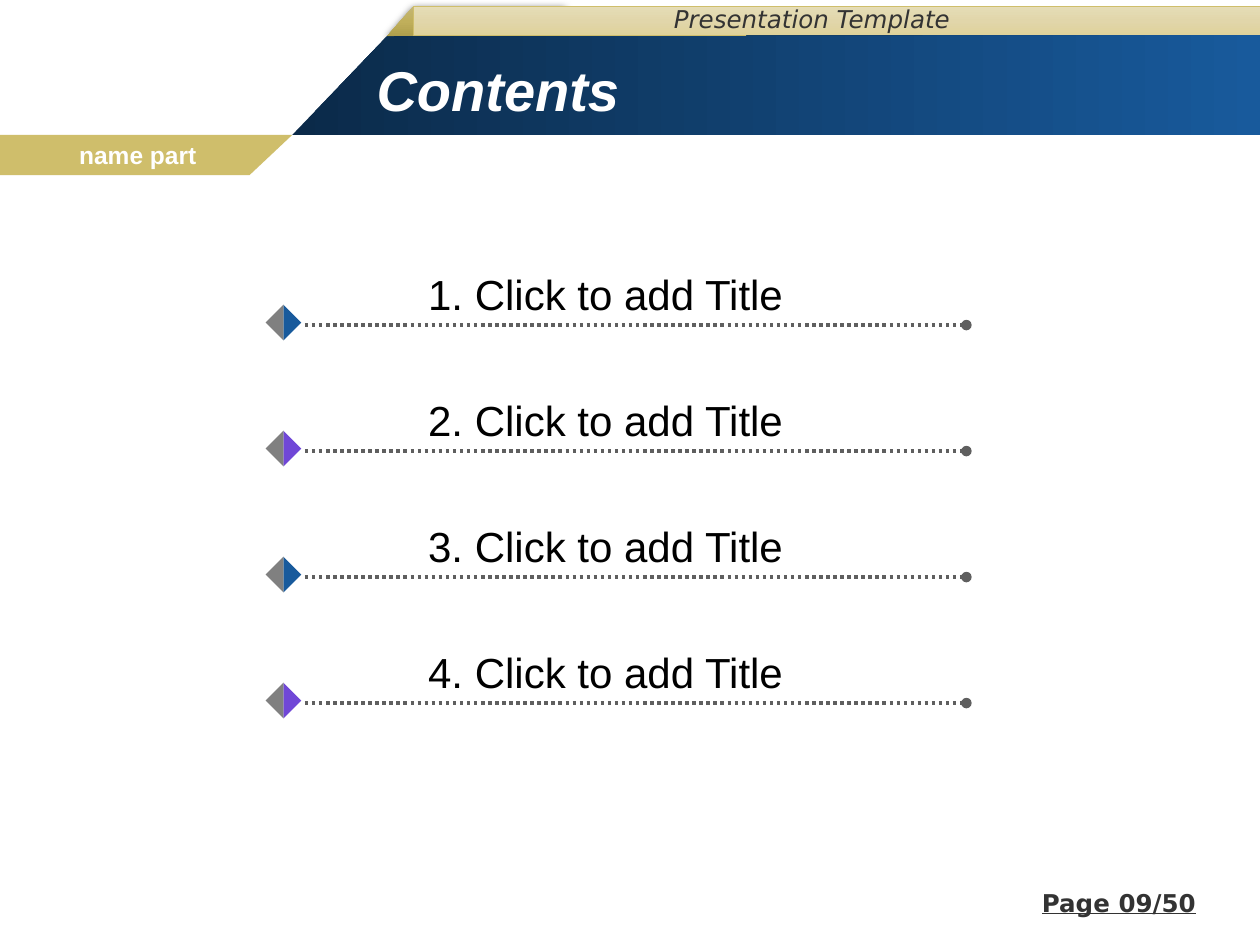
"""Build a contents slide with a slanted header and four dotted title rows."""
import copy

import lxml.etree
import pptx
import pptx.dml.color
import pptx.enum.dml
import pptx.enum.shapes
import pptx.enum.text
import pptx.oxml.ns
import pptx.util

Inches = pptx.util.Inches
Pt = pptx.util.Pt
RGB = pptx.dml.color.RGBColor.from_string
qn = pptx.oxml.ns.qn
SHAPE = pptx.enum.shapes.MSO_SHAPE
ALIGN = pptx.enum.text.PP_ALIGN
ANCHOR = pptx.enum.text.MSO_ANCHOR

COLORS = {
    "gold": "CFBE6B", "white": "FFFFFF", "ink": "333333", "black": "000000",
    "dots": "5F5F5F", "gray": "808080", "blue": "185A9C", "purple": "7047D7",
    "navy": "0B2A49",
    "fold_top": "C3B575", "fold_middle": "C0AF5B", "fold_bottom": "AF9F4C",
    "strip_top": "E6DDB7", "strip_middle": "E1D6AA", "strip_bottom": "DFD29B",
}


def paint(shape, color_names, angle=0):
    shape.shadow.inherit = False
    shape.line.fill.background()
    if len(color_names) == 1:
        shape.fill.solid()
        shape.fill.fore_color.rgb = RGB(COLORS[color_names[0]])
        return
    shape.fill.gradient()
    shape.fill.gradient_angle = angle
    stop_list = shape.element.spPr.find(".//" + qn("a:gsLst"))
    for _ in color_names[2:]:
        stop_list.append(copy.deepcopy(stop_list[0]))
    for index, (stop, name) in enumerate(zip(shape.fill.gradient_stops, color_names)):
        stop.color.rgb = RGB(COLORS[name])
        stop.position = index / (len(color_names) - 1)


def add_text(text, box, color, style, align=ALIGN.LEFT, wrap=True, anchor=ANCHOR.TOP):
    frame = slide.shapes.add_textbox(*map(Inches, box)).text_frame
    frame.word_wrap = wrap
    frame.vertical_anchor = anchor
    paragraph = frame.paragraphs[0]
    paragraph.text = text
    paragraph.alignment = align
    for attribute, value in style.items():
        setattr(paragraph.font, attribute, value)
    paragraph.font.color.rgb = RGB(COLORS[color])


presentation = pptx.Presentation()
presentation.slide_width = Inches(10)
presentation.slide_height = Inches(7.5)
slide = presentation.slides.add_slide(presentation.slide_layouts[6])

part_tag = [(0, 1.07), (2.32, 1.07), (1.98, 1.39), (0, 1.39)]
fold = [(4.48, 0.29), (3.07, 0.29), (3.28, 0.05), (4.48, 0.05)]
title_band = [(2.32, 1.07), (10, 1.07), (10, 0.28), (3.07, 0.29)]

header = []
for points, color_names, angle in [
    (part_tag, ["gold"], 0),
    (fold, ["fold_top", "fold_middle", "fold_bottom"], 270),
    (title_band, ["navy", "blue"], 0),
]:
    corners = [(Inches(x), Inches(y)) for x, y in points]
    outline = slide.shapes.build_freeform(*corners[0])
    outline.add_line_segments(corners[1:], close=True)
    panel = outline.convert_to_shape()
    paint(panel, color_names, angle)
    header.append(panel)
    if points is fold:
        strip = slide.shapes.add_shape(
            SHAPE.RECTANGLE, Inches(3.28), Inches(0.05), Inches(6.72), Inches(0.23))
        paint(strip, ["strip_top", "strip_middle", "strip_bottom"], 270)
        strip.line.color.rgb = RGB(COLORS["gold"])
        strip.line.width = Pt(0.5)

fold_effects = header[1].element.spPr.find(qn("a:effectLst"))
fold_shadow = lxml.etree.SubElement(
    fold_effects, qn("a:outerShdw"), blurRad=str(Pt(4.5)), dist=str(Pt(1.5)), dir="5400000")
shadow_color = lxml.etree.SubElement(fold_shadow, qn("a:srgbClr"), val=COLORS["black"])
lxml.etree.SubElement(shadow_color, qn("a:alpha"), val="63000")

add_text("name part", (0.53, 1.06, 1.13, 0.34), "white",
         {"name": "Arial", "size": Pt(14), "bold": True}, wrap=False)
add_text("Contents", (2.89, 0.4, 7.11, 0.62), "white",
         {"name": "Arial", "size": Pt(32), "bold": True, "italic": True},
         anchor=ANCHOR.MIDDLE)
add_text("Page 09/50", (6.42, 7, 3.17, 0.35), "ink",
         {"name": "DejaVu Sans", "size": Pt(14), "bold": True, "underline": True},
         align=ALIGN.RIGHT)

for row, accent in enumerate(["blue", "purple", "blue", "purple"]):
    rule_y = Inches(2.58 + row)
    rule = slide.shapes.add_connector(
        pptx.enum.shapes.MSO_CONNECTOR.STRAIGHT, Inches(2.42), rule_y, Inches(7.67), rule_y)
    rule.line.color.rgb = RGB(COLORS["dots"])
    rule.line.width = Pt(2)
    rule.line.dash_style = pptx.enum.dml.MSO_LINE.ROUND_DOT
    rule_properties = rule.element.spPr
    lxml.etree.SubElement(rule_properties.find(qn("a:ln")), qn("a:tailEnd"), type="oval")
    lxml.etree.SubElement(rule_properties, qn("a:effectLst"))

    for rotation, color in [(45, "gray"), (225, accent)]:
        diamond_half = slide.shapes.add_shape(
            SHAPE.RIGHT_TRIANGLE, Inches(2.15), Inches(2.46 + row), Inches(0.2), Inches(0.2))
        diamond_half.rotation = rotation
        paint(diamond_half, [color])

    add_text(f"{row + 1}. Click to add Title", (3.3, 2.08 + row, 3.04, 0.5), "black",
             {"name": "Arial", "size": Pt(24)}, wrap=False)

add_text("Presentation Template", (5.25, -0.02, 3, 0.35), "ink",
         {"name": "DejaVu Sans", "size": Pt(14), "italic": True})

presentation.save("out.pptx")
